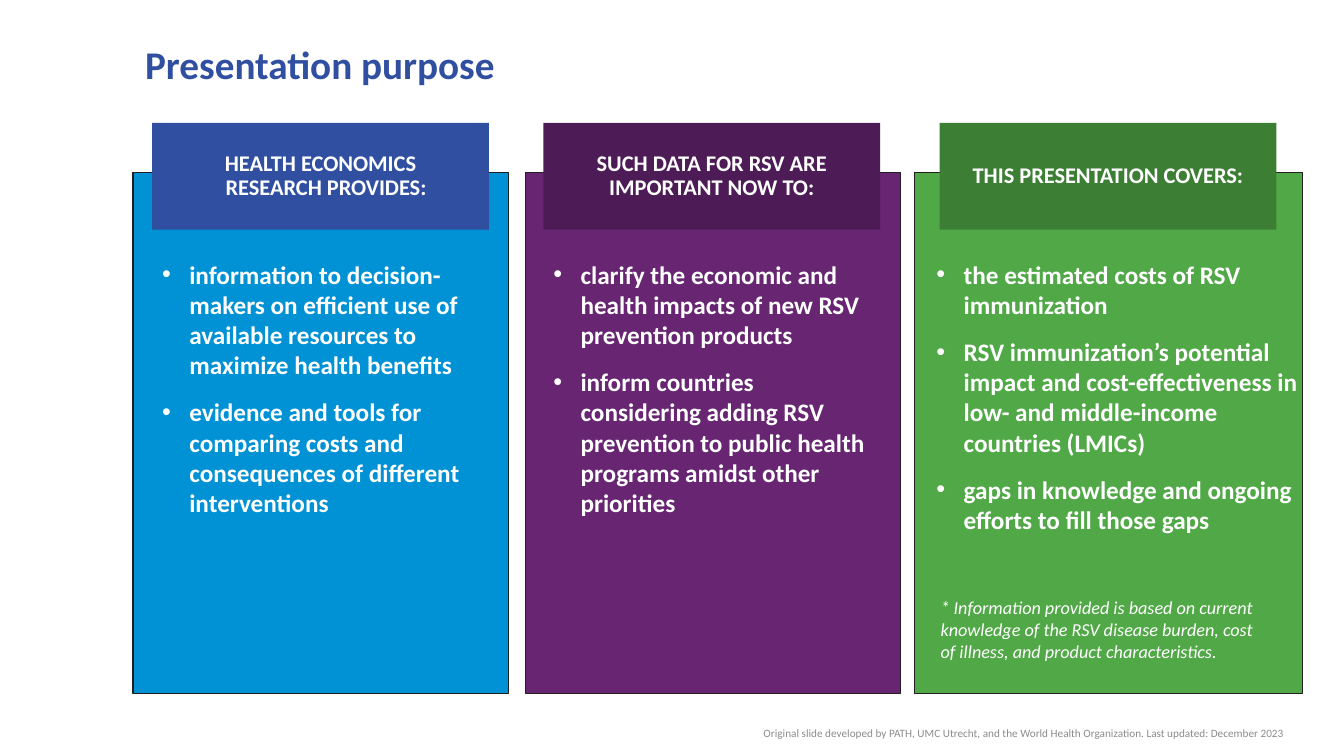
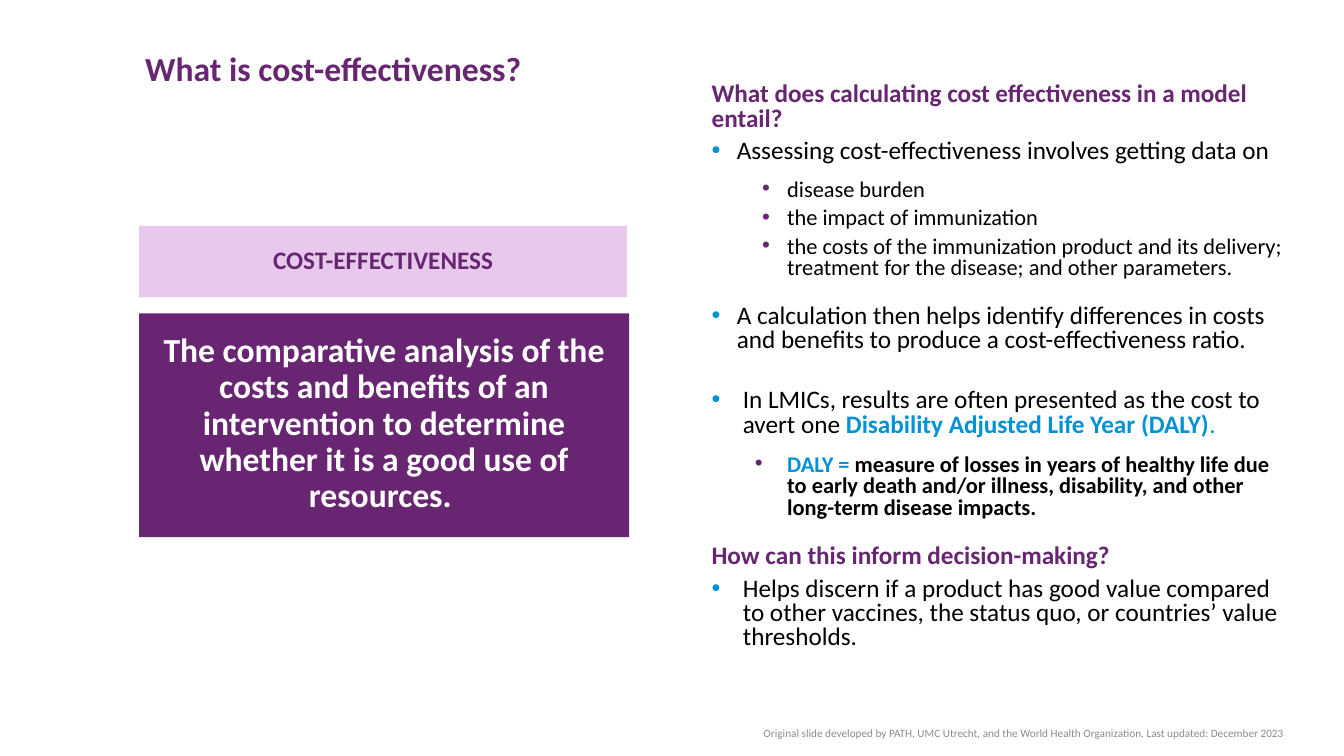
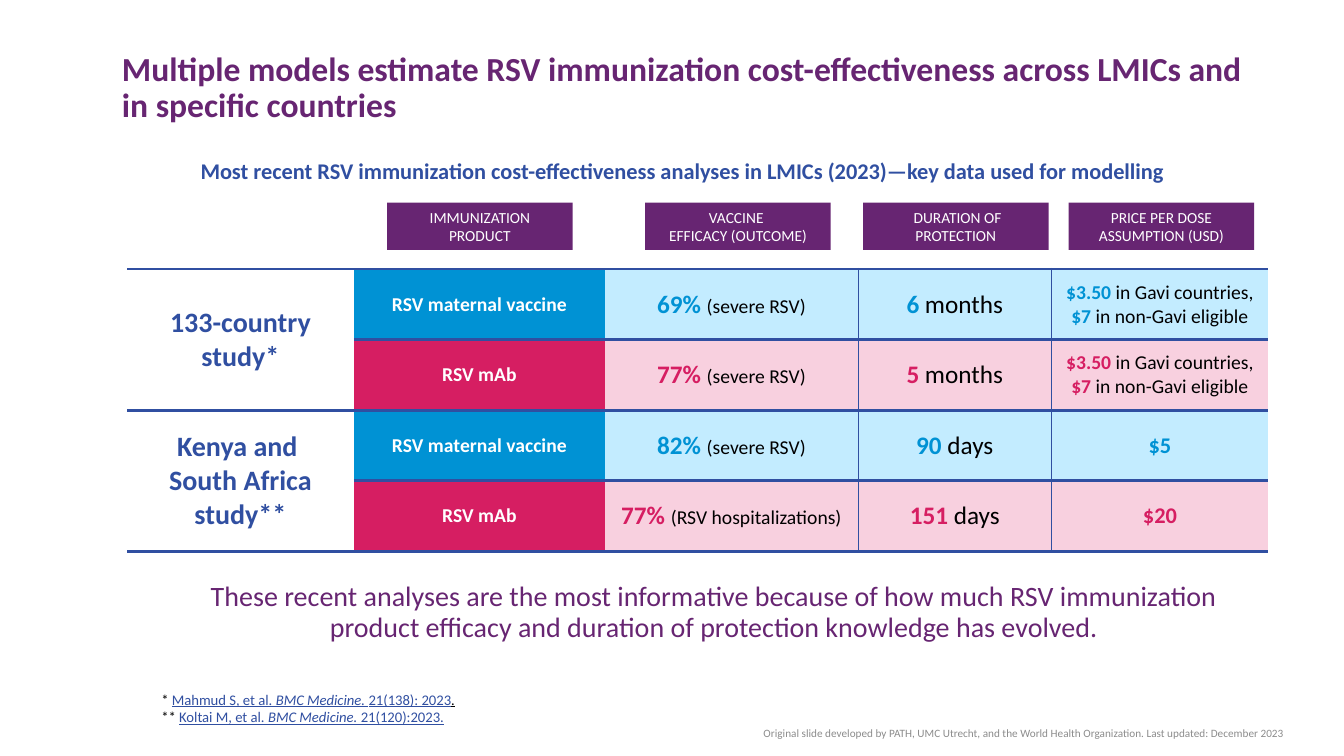
from dataclasses import dataclass
from typing import Optional

import lxml.etree
import pptx
import pptx.dml.color
import pptx.enum.shapes
import pptx.enum.text
import pptx.oxml.ns
import pptx.util

Inches = pptx.util.Inches
Pt = pptx.util.Pt
RGBColor = pptx.dml.color.RGBColor
PP_ALIGN = pptx.enum.text.PP_ALIGN
MSO_ANCHOR = pptx.enum.text.MSO_ANCHOR
qn = pptx.oxml.ns.qn

# Shared look
FONT = "Calibri"
NAVY = RGBColor(0x30, 0x4F, 0xA1)
SKY = RGBColor(0x00, 0x92, 0xD4)
PALE_SKY = RGBColor(0xC3, 0xEC, 0xFF)
PURPLE = RGBColor(0x67, 0x25, 0x72)
DEEP_PURPLE = RGBColor(0x4D, 0x1C, 0x56)
LILAC = RGBColor(0xE8, 0xC9, 0xED)
GREEN = RGBColor(0x51, 0xA8, 0x47)
DEEP_GREEN = RGBColor(0x3D, 0x7E, 0x35)
MAGENTA = RGBColor(0xD6, 0x1E, 0x62)
PALE_PINK = RGBColor(0xF8, 0xD0, 0xDF)
OUTLINE = RGBColor(0x23, 0x1F, 0x20)
GREY = RGBColor(0x8C, 0x8C, 0x8C)
BLACK = RGBColor(0, 0, 0)
WHITE = RGBColor(0xFF, 0xFF, 0xFF)
FOOTER = ("Original slide developed by PATH, UMC Utrecht, and the World Health "
          "Organization. Last updated: December 2023")


@dataclass(frozen=True)
class Span:
    text: str
    size: float
    color: RGBColor = BLACK
    bold: bool = False
    italic: bool = False
    underline: bool = False


@dataclass(frozen=True)
class Para:
    spans: tuple[Span, ...]
    align: PP_ALIGN = PP_ALIGN.LEFT
    line: float | pptx.util.Length = 1.0
    before: float = 0
    after: float = 0
    margin: float = 0
    hang: float = 0
    bullet: Optional[RGBColor] = None


@dataclass(frozen=True)
class Panel:
    left: float
    width: float
    label_left: float
    body_left: float
    body_width: float
    fill: RGBColor
    label_fill: RGBColor
    label: str
    points: tuple[str, ...]
    label_hang: float = 0


@dataclass(frozen=True)
class Product:
    name: str
    color: RGBColor
    tint: RGBColor


@dataclass(frozen=True)
class Estimate:
    product: Product
    efficacy: str
    outcome: str
    duration: str
    unit: str
    price: str = ""


# Text helpers
def write(frame, paras, insets=(0.1, 0.05), anchor=MSO_ANCHOR.TOP) -> None:
    frame.word_wrap = True
    frame.vertical_anchor = anchor
    frame.margin_left = frame.margin_right = Inches(insets[0])
    frame.margin_top = frame.margin_bottom = Inches(insets[1])
    write_paragraphs(frame, paras)


def write_paragraphs(frame, paras) -> None:
    for index, para in enumerate(paras):
        paragraph = frame.paragraphs[0] if index == 0 else frame.add_paragraph()
        if para.margin:
            properties = paragraph._p.get_or_add_pPr()
            properties.set("marL", str(Inches(para.margin)))
            properties.set("indent", str(Inches(-para.hang)))
        if para.bullet is not None:
            add_bullet(paragraph, para.bullet)
        paragraph.alignment = para.align
        paragraph.line_spacing = para.line
        paragraph.space_before = Pt(para.before)
        paragraph.space_after = Pt(para.after)
        for span in para.spans:
            write_span(paragraph, span)


def write_span(paragraph, span: Span) -> None:
    for index, line in enumerate(span.text.split("\n")):
        if index:
            paragraph.add_line_break()
        run = paragraph.add_run()
        run.text = line
        run.font.name = FONT
        run.font.size = Pt(span.size)
        run.font.bold = span.bold
        run.font.italic = span.italic
        run.font.underline = span.underline
        run.font.color.rgb = span.color


def add_bullet(paragraph, color: RGBColor) -> None:
    properties = paragraph._p.get_or_add_pPr()
    tint = lxml.etree.SubElement(properties, qn("a:buClr"))
    lxml.etree.SubElement(tint, qn("a:srgbClr"), val=str(color))
    lxml.etree.SubElement(properties, qn("a:buFont"), typeface="Arial")
    lxml.etree.SubElement(properties, qn("a:buChar"), char="•")


def centered(*spans: Span, **layout) -> Para:
    return Para(spans, PP_ALIGN.CENTER, **layout)


# Drawing helpers
def add_text(slide, left: float, top: float, width: float, height: float,
             paras, insets=(0.1, 0.05)) -> None:
    box = slide.shapes.add_textbox(Inches(left), Inches(top), Inches(width), Inches(height))
    write(box.text_frame, paras, insets)


def add_block(slide, left: float, top: float, width: float, height: float,
              fill: RGBColor, paras=(), insets=(0.1, 0.05),
              anchor=MSO_ANCHOR.MIDDLE, outline: Optional[RGBColor] = None) -> None:
    block = slide.shapes.add_shape(pptx.enum.shapes.MSO_SHAPE.RECTANGLE, Inches(left),
                                   Inches(top), Inches(width), Inches(height))
    block.shadow.inherit = False
    block.fill.solid()
    block.fill.fore_color.rgb = fill
    if outline is None:
        block.line.fill.background()
    else:
        block.line.color.rgb = outline
        block.line.width = Pt(0.92)
    write(block.text_frame, paras, insets, anchor)


def new_slide(deck, title: str, color: RGBColor = PURPLE, size: float = 24,
              left: float = 1.44, top: float = 0.52):
    slide = deck.slides.add_slide(deck.slide_layouts[6])
    add_text(slide, left, top, 11.37, 0.9,
             [Para((Span(title, size, color, bold=True),), line=0.9)], (0, 0))
    add_text(slide, 7.35, 7.16, 5.49, 0.23,
             [Para((Span(FOOTER, 8, GREY),), PP_ALIGN.RIGHT)])
    return slide


# Slide 1: three panels
PANELS = (
    Panel(1.32, 3.72, 1.51, 1.51, 3.34, SKY, NAVY, "HEALTH ECONOMICS RESEARCH PROVIDES:", (
        "information to decision-makers on efficient use of available resources to "
        "maximize health benefits",
        "evidence and tools for comparing costs and consequences of different interventions"),
        label_hang=0.11),
    Panel(5.21, 3.72, 5.39, 5.39, 3.34, PURPLE, DEEP_PURPLE,
          "SUCH DATA FOR RSV ARE IMPORTANT NOW TO:", (
              "clarify the economic and health impacts of new RSV prevention products",
              "inform countries considering adding RSV prevention to public health programs "
              "amidst other priorities")),
    Panel(9.07, 3.85, 9.32, 9.19, 3.8, GREEN, DEEP_GREEN, "THIS PRESENTATION COVERS:", (
        "the estimated costs of RSV immunization",
        "RSV immunization’s potential impact and cost-effectiveness in low- and "
        "middle-income countries (LMICs)",
        "gaps in knowledge and ongoing efforts to fill those gaps")),
)


def build_purpose(deck) -> None:
    slide = new_slide(deck, "Presentation purpose", NAVY, 28, top=0.45)
    for panel in PANELS:
        add_block(slide, panel.left, 1.71, panel.width, 5.17, panel.fill, outline=OUTLINE)
        add_block(slide, panel.label_left, 1.22, 3.34, 1.06, panel.label_fill,
                  [centered(Span(panel.label, 16, WHITE, bold=True), line=Pt(17.2),
                            margin=panel.label_hang, hang=panel.label_hang)], (0.28, 0))
        add_text(slide, panel.body_left, 2.52, panel.body_width, 2.69,
                 [Para((Span(point, 18, WHITE, bold=True),), after=12,
                       margin=0.27, hang=0.27, bullet=WHITE) for point in panel.points])
    caveat = ("* Information provided is based on current knowledge of the RSV disease burden, "
              "cost of illness, and product characteristics.")
    add_text(slide, 9.23, 5.87, 3.39, 0.76, [Para((Span(caveat, 13, WHITE, italic=True),))])


# Slide 2: definition and explanation
def question(text: str, before: float = 0) -> Para:
    return Para((Span(text, 18, PURPLE, bold=True),), line=0.8, before=before, after=6)


def point(*spans: Span, before: float = 0, margin: float = 0.25) -> Para:
    return Para(spans, line=0.8, before=before, after=6,
                margin=margin, hang=margin, bullet=SKY)


def subpoint(*spans: Span, before: float = 5, hang: float = 0.25) -> Para:
    return Para(spans, line=0.8, before=before, margin=0.75, hang=hang, bullet=PURPLE)


EXPLANATION = (
    question("What does calculating cost effectiveness in a model entail?"),
    point(Span("Assessing cost-effectiveness involves getting data on", 18)),
    *(subpoint(Span(text, 16)) for text in (
        "disease burden",
        "the impact of immunization",
        "the costs of the immunization product and its delivery; treatment for the disease; "
        "and other parameters.")),
    point(Span("A calculation then helps identify differences in costs and benefits to produce "
               "a cost-effectiveness ratio.", 18), before=18),
    point(Span("In LMICs, results are often presented as the cost to avert one ", 18),
          Span("Disability Adjusted Life Year (DALY)", 18, SKY, bold=True),
          Span(".", 18, SKY), before=19.7, margin=0.31),
    subpoint(Span("DALY = ", 16, SKY, bold=True),
             Span("measure of losses in years of healthy life due to early death and/or "
                  "illness, disability, and other long-term disease impacts.", 16, bold=True),
             before=6, hang=0.32),
    question("How can this inform decision-making?", before=18.7),
    point(Span("Helps discern if a product has good value compared to other vaccines, "
               "the status quo, or countries’ value thresholds.", 18), margin=0.31),
)


def build_definition(deck) -> None:
    slide = new_slide(deck, "What is cost-effectiveness?")
    add_text(slide, 6.96, 0.78, 5.93, 6.21, EXPLANATION)
    definition = ("The comparative analysis of the costs and benefits of an intervention "
                  "to determine whether it is a good use of resources. ")
    add_block(slide, 1.38, 3.11, 4.86, 2.22, PURPLE,
              [centered(Span(definition, 24, WHITE, bold=True), line=0.9)],
              (0.2, 0.2), MSO_ANCHOR.TOP)
    add_block(slide, 1.38, 2.24, 4.84, 0.71, LILAC,
              [centered(Span("COST-EFFECTIVENESS", 18, PURPLE, bold=True), line=0.9)], (0.2, 0.2))


# Slide 3: table of studies
VACCINE = Product("RSV maternal vaccine", SKY, PALE_SKY)
ANTIBODY = Product("RSV mAb", MAGENTA, PALE_PINK)
STUDIES = ("133-country study*", "Kenya and \nSouth Africa study**")
ESTIMATES = (
    Estimate(VACCINE, "69% ", "(severe RSV)", "6", " months"),
    Estimate(ANTIBODY, "77% ", "(severe RSV)", "5", " months"),
    Estimate(VACCINE, "82% ", "(severe RSV)", "90", " days", "$5"),
    Estimate(ANTIBODY, "77% ", "(RSV hospitalizations)", "151", " days", "$20"),
)
HEADER_HEIGHT, ROW_HEIGHT = 0.34, 0.7
COLUMN_WIDTHS = (2.25, 2.49, 2.51, 1.92, 2.15)
COLUMN_LABELS = (
    (3.84, ("IMMUNIZATION PRODUCT",)),
    (6.4, ("VACCINE ", "EFFICACY (OUTCOME)")),
    (8.56, (" DURATION OF PROTECTION",)),
    (10.6, ("PRICE PER DOSE ASSUMPTION (USD)",)),
)


def set_borders(cell, left: float, right: float, top: float, bottom: float) -> None:
    properties = cell._tc.get_or_add_tcPr()
    edges = (("a:lnL", left), ("a:lnR", right), ("a:lnT", top), ("a:lnB", bottom))
    for index, (tag, width) in enumerate(edges):
        edge = lxml.etree.Element(qn(tag), w=str(Pt(width)))
        properties.insert(index, edge)
        if width:
            solid = lxml.etree.SubElement(edge, qn("a:solidFill"))
            lxml.etree.SubElement(solid, qn("a:srgbClr"), val=str(NAVY))
        else:
            lxml.etree.SubElement(edge, qn("a:noFill"))


def price_spans(estimate: Estimate) -> tuple[Span, ...]:
    color = estimate.product.color
    if estimate.price:
        return (Span(estimate.price, 16, color, bold=True),)
    return (Span("$3.50 ", 14, color, bold=True), Span("in Gavi countries, ", 14),
            Span("$7 ", 14, color, bold=True), Span("in non-Gavi eligible", 14))


def fill_cell(cell, spans=(), fill: Optional[RGBColor] = None) -> None:
    cell.vertical_anchor = MSO_ANCHOR.MIDDLE
    if fill is None:
        cell.fill.background()
        cell.margin_top = cell.margin_bottom = 0
    else:
        cell.fill.solid()
        cell.fill.fore_color.rgb = fill
    write_paragraphs(cell.text_frame, [centered(*spans)])


def add_studies_table(slide) -> None:
    rows = len(ESTIMATES) + 1
    table = slide.shapes.add_table(
        rows, len(COLUMN_WIDTHS), Inches(1.26), Inches(2.33), Inches(sum(COLUMN_WIDTHS)),
        Inches(HEADER_HEIGHT + ROW_HEIGHT * len(ESTIMATES))).table
    table.first_row = table.horz_banding = False
    for column, width in zip(table.columns, COLUMN_WIDTHS):
        column.width = Inches(width)
    for index, row in enumerate(table.rows):
        row.height = Inches(ROW_HEIGHT if index else HEADER_HEIGHT)

    # Open row behind the column labels
    for column in range(len(COLUMN_WIDTHS)):
        fill_cell(table.cell(0, column))
        set_borders(table.cell(0, column), 0, 0, 0, 2.25)

    for row, estimate in enumerate(ESTIMATES, start=1):
        product = estimate.product
        contents = (
            (Span(product.name, 14, WHITE, bold=True),),
            (Span(estimate.efficacy, 18, product.color, bold=True), Span(estimate.outcome, 14)),
            (Span(estimate.duration, 18, product.color, bold=True), Span(estimate.unit, 18)),
            price_spans(estimate),
        )
        for column, spans in enumerate(contents, start=1):
            fill_cell(table.cell(row, column), spans,
                      product.color if column == 1 else product.tint)

    for index, name in enumerate(STUDIES):
        study = table.cell(2 * index + 1, 0)
        study.merge(table.cell(2 * index + 2, 0))
        fill_cell(study, [Span(name, 20, NAVY, bold=True)])

    for row in range(1, rows):
        for column in range(len(COLUMN_WIDTHS)):
            cell = table.cell(row, column)
            set_borders(cell, 0.75 if column in (3, 4) else 0, 0.75 if column in (2, 3) else 0,
                        0 if cell.is_spanned else 2.25, 2.25)


def citation(mark: str, authors: str, issue: str, *ending: Span) -> Para:
    return Para((Span(mark, 10.5), Span(authors, 10.5, NAVY, underline=True),
                 Span("BMC Medicine. ", 10.5, NAVY, italic=True, underline=True),
                 Span(issue, 10.5, NAVY, underline=True), *ending))


def build_models(deck) -> None:
    slide = new_slide(deck, "Multiple models estimate RSV immunization cost-effectiveness "
                            "across LMICs and in specific countries", left=1.21)
    subtitle = ("Most recent RSV immunization cost-effectiveness analyses in LMICs "
                "(2023)—key data used for modelling")
    add_text(slide, 1.89, 1.51, 10.61, 0.37, [Para((Span(subtitle, 16, NAVY, bold=True),))])
    add_studies_table(slide)
    for left, lines in COLUMN_LABELS:
        add_block(slide, left, 2.01, 1.84, 0.47, PURPLE,
                  [centered(Span(line, 11, WHITE)) for line in lines])
    conclusion = ("These recent analyses are the most informative because of how much RSV "
                  "immunization product efficacy and duration of protection knowledge has evolved.")
    add_text(slide, 2.08, 5.78, 10, 1,
             [centered(Span(conclusion, 20, PURPLE), line=0.9)], (0, 0))
    add_text(slide, 1.6, 6.85, 5, 0.4, [
        citation("* ", "Mahmud S, et al. ", "21(138): 2023",
                 Span(".", 10.5, italic=True, underline=True)),
        citation("** ", "Koltai M, et al. ", "21(120):2023."),
    ], (0, 0))


def main() -> None:
    deck = pptx.Presentation()
    deck.slide_width, deck.slide_height = Inches(13.33), Inches(7.5)
    build_purpose(deck)
    build_definition(deck)
    build_models(deck)
    deck.save("out.pptx")


if __name__ == "__main__":
    main()
